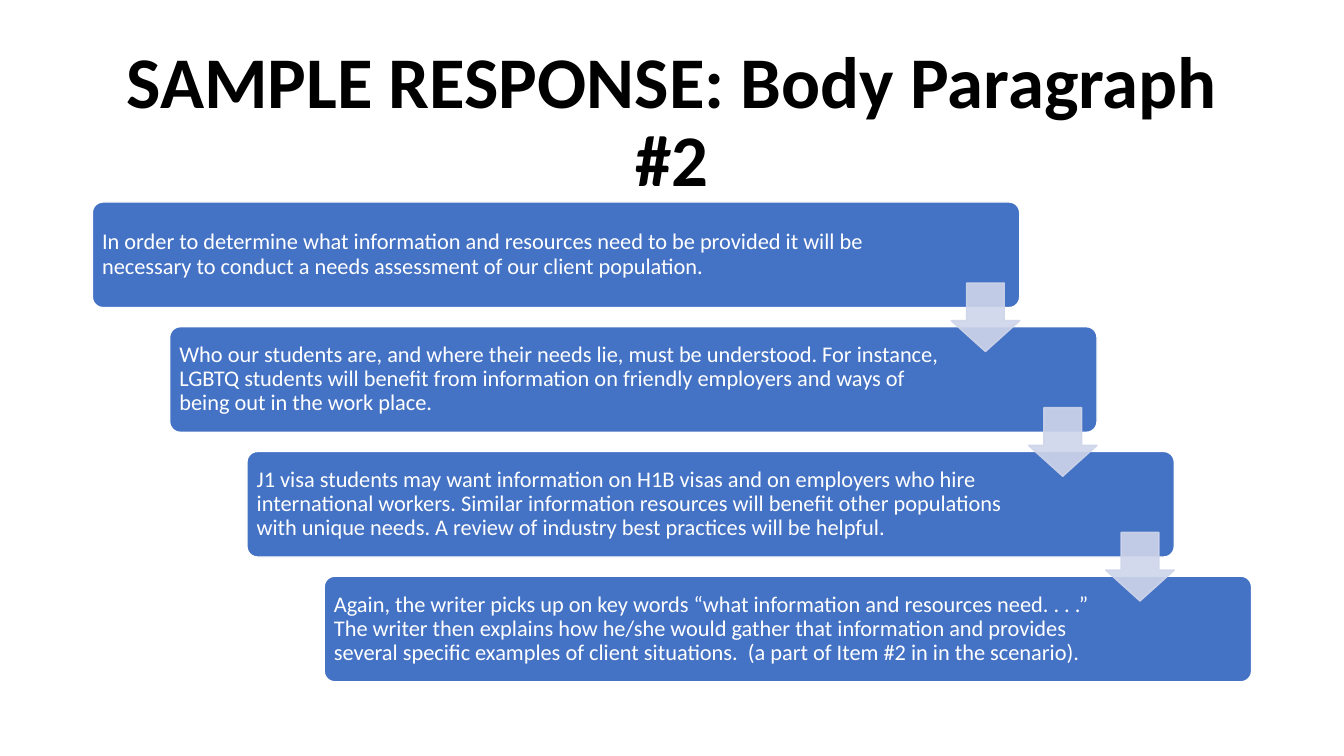
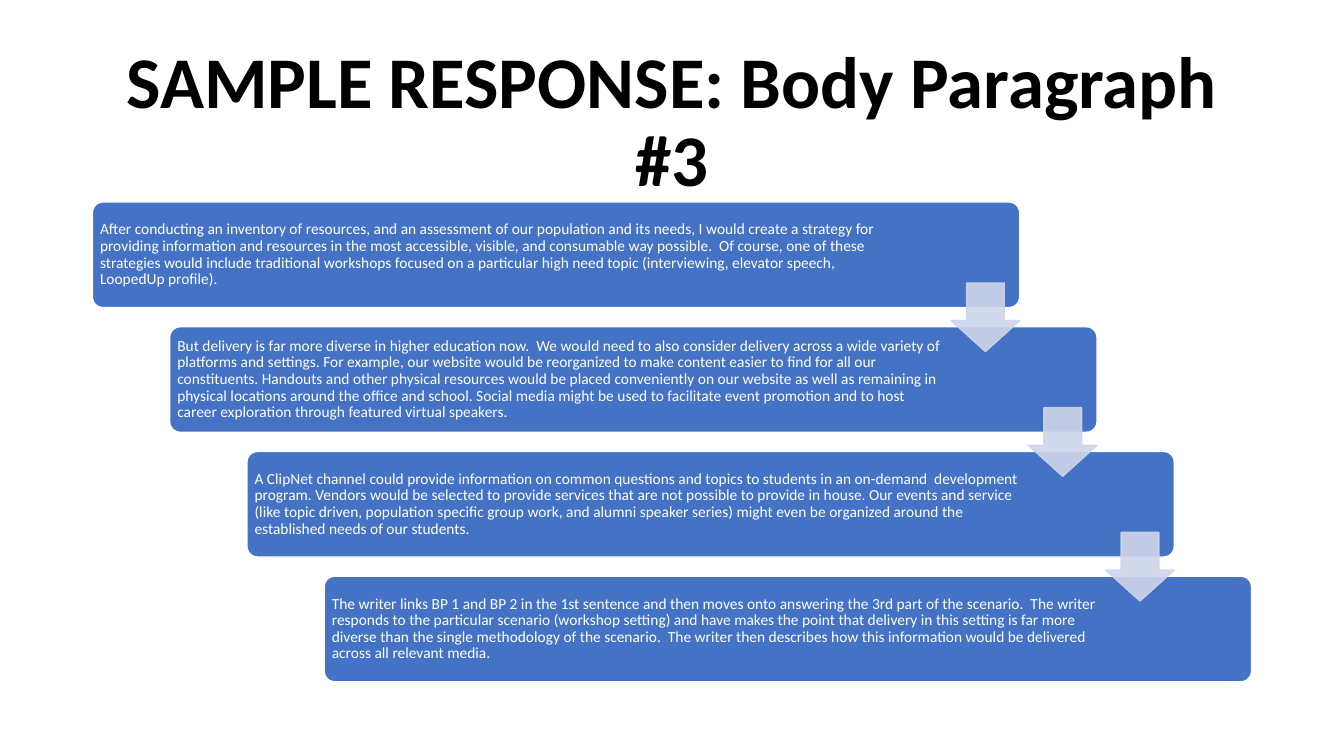
from pptx import Presentation
from pptx.dml.color import RGBColor
from pptx.enum.shapes import MSO_SHAPE as Shape
from pptx.enum.text import MSO_ANCHOR as Anchor, PP_ALIGN as Align
from pptx.oxml.ns import qn
from pptx.util import Pt
from lxml.etree import SubElement

COLORS = {"title": "000000", "step": "4472C4", "text": "FFFFFF",
          "edge": "FFFFFF", "arrow": "CFD5EA"}
FONT = "Calibri"

# Boxes: left, top, width, height
TITLE_BOX = (66, 44, 828, 89.2)
STAIRS_BOX = (66, 144.3, 828, 342.7)

STEP_WIDTH, STEP_HEIGHT = 662.4, 75.4
ARROW_SIZE, ARROW_DROP = 49, 57.8
FIRST_MARGIN, LATER_MARGIN = 83.4, 104.1  # room kept free for the arrows

PAGES = [
    ("SAMPLE RESPONSE: Body Paragraph #2", 16, [
        "In order to determine what information and resources need to be provided "
        "it will be necessary to conduct a needs assessment of our client population.",
        "Who our students are, and where their needs lie, must be understood. "
        "For instance, LGBTQ students will benefit from information on friendly employers "
        "and ways of being out in the work place.",
        "J1 visa students may want information on H1B visas and on employers who "
        "hire international workers. Similar information resources will benefit other "
        "populations with unique needs. A review of industry best practices will be helpful.",
        "Again, the writer picks up on key words “what information and resources need. . . .”  "
        "The writer then explains how he/she would gather that information and provides "
        "several specific examples of client situations.  (a part of Item #2 in in the scenario).",
    ]),
    ("SAMPLE RESPONSE: Body Paragraph #3", 11, [
        "After conducting an inventory of resources, and an assessment of our population "
        "and its needs, I would create a strategy for providing information and resources "
        "in the most accessible, visible, and consumable way possible.  Of course, one of these "
        "strategies would include traditional workshops focused on a particular high need topic "
        "(interviewing, elevator speech, LoopedUp profile).",
        "But delivery is far more diverse in higher education now.  We would need to also "
        "consider delivery across a wide variety of platforms and settings. For example, our "
        "website would be reorganized to make content easier to find for all our constituents. "
        "Handouts and other physical resources would be placed conveniently on our website as "
        "well as remaining in physical locations around the office and school. Social media "
        "might be used to facilitate event promotion and to host career exploration through "
        "featured virtual speakers.",
        "A ClipNet channel could provide information on common questions and topics to "
        "students in an on-demand  development program. Vendors would be selected to provide "
        "services that are not possible to provide in house. Our events and service (like topic "
        "driven, population specific group work, and alumni speaker series) might even be "
        "organized around the established needs of our students.",
        "The writer links BP 1 and BP 2 in the 1st sentence and then moves onto answering "
        "the 3rd part of the scenario.  The writer responds to the particular scenario "
        "(workshop setting) and have makes the point that delivery in this setting is far more "
        "diverse than the single methodology of the scenario.  The writer then describes how "
        "this information would be delivered across all relevant media.",
    ]),
]


def color(name):
    return RGBColor.from_string(COLORS[name])


def write(shape, text, size, ink, align, bold=False):
    frame = shape.text_frame
    frame.word_wrap = True
    frame.vertical_anchor = Anchor.MIDDLE
    para = frame.paragraphs[0]
    para.alignment = align
    para.line_spacing = 0.9
    span = para.add_run()
    span.text = text
    font = span.font
    font.name, font.size, font.bold = FONT, Pt(size), bold
    font.color.rgb = color(ink)
    return frame


def add_figure(page, kind, box, adjustments, fill, edge):
    shape = page.shapes.add_shape(kind, *map(Pt, box))
    shape.shadow.inherit = False
    for index, value in enumerate(adjustments):
        shape.adjustments[index] = value
    shape.fill.solid()
    shape.fill.fore_color.rgb = color(fill)
    shape.line.color.rgb = color(edge)
    shape.line.width = Pt(1)
    return shape


def add_title(page, box, text):
    title = page.shapes.add_textbox(*map(Pt, box))
    write(title, text, 52, "title", Align.CENTER, bold=True)


def add_step(page, box, text, size, margin):
    step = add_figure(page, Shape.ROUNDED_RECTANGLE, box, [0.1], "step", "edge")
    frame = write(step, text, size, "text", Align.LEFT)
    inset = 0.3 * size
    frame.margin_left = frame.margin_top = frame.margin_bottom = Pt(inset)
    frame.margin_right = Pt(margin + inset)


def add_arrow(page, box):
    arrow = add_figure(page, Shape.DOWN_ARROW, box, [0.55, 0.45], "arrow", "arrow")
    # Slight transparency of fill and line
    for tint in arrow._element.spPr.iter(qn("a:srgbClr")):
        SubElement(tint, qn("a:alpha"), val="90000")


def add_stairs(page, box, texts, size):
    left, top, width, height = box
    gaps = len(texts) - 1
    across, down = (width - STEP_WIDTH) / gaps, (height - STEP_HEIGHT) / gaps
    corners = [(left + i * across, top + i * down) for i in range(len(texts))]
    # Steps
    for i, ((x, y), text) in enumerate(zip(corners, texts)):
        margin = LATER_MARGIN if i else FIRST_MARGIN
        add_step(page, (x, y, STEP_WIDTH, STEP_HEIGHT), text, size, margin)
    # Arrows, flush with the right end of the step above
    for x, y in corners[:-1]:
        add_arrow(page, (x + STEP_WIDTH - ARROW_SIZE, y + ARROW_DROP,
                         ARROW_SIZE, ARROW_SIZE))


def main():
    deck = Presentation()
    deck.slide_width, deck.slide_height = Pt(960), Pt(540)
    for title, size, texts in PAGES:
        page = deck.slides.add_slide(deck.slide_layouts[6])
        add_title(page, TITLE_BOX, title)
        add_stairs(page, STAIRS_BOX, texts, size)
    deck.save("out.pptx")


if __name__ == "__main__":
    main()
